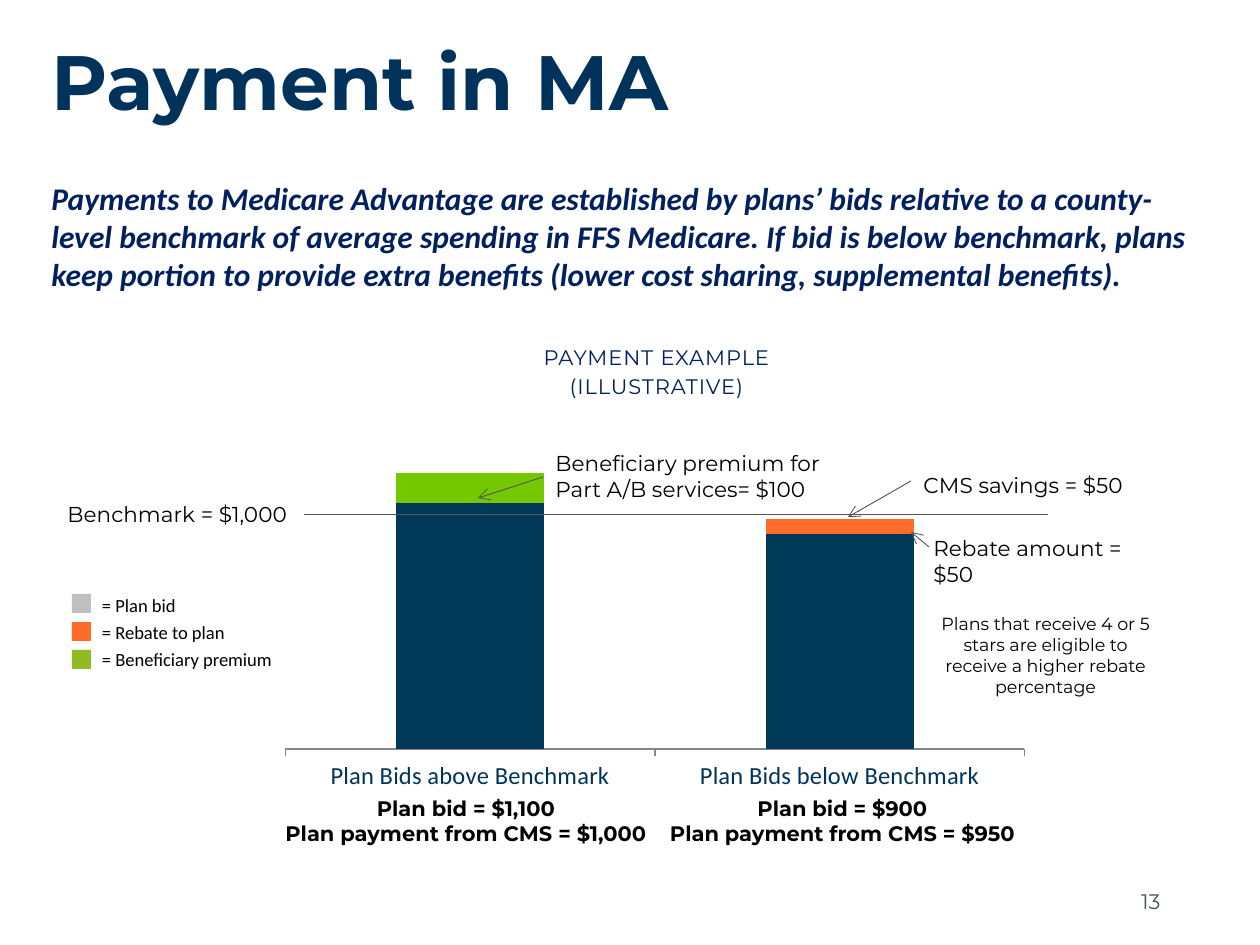
import pptx
import pptx.chart.data
import pptx.dml.color
import pptx.enum.chart
import pptx.enum.shapes
import pptx.enum.text
import pptx.oxml
import pptx.util
from lxml import etree

PX = pptx.util.Inches(1) / 126
ALIGN = pptx.enum.text.PP_ALIGN
ANCHOR = pptx.enum.text.MSO_ANCHOR
NS = 'xmlns:a="http://schemas.openxmlformats.org/drawingml/2006/main"'
rgb = pptx.dml.color.RGBColor.from_string

deck = pptx.Presentation()
deck.slide_width, deck.slide_height = round(1260 * PX), round(945 * PX)
slide = deck.slides.add_slide(deck.slide_layouts[6])
shapes = slide.shapes


def add_text(box, lines, size, color="000000", font="Montserrat", bold=False,
             italic=False, align=ALIGN.LEFT, wrap=False, anchor=ANCHOR.TOP):
    """Box is left, top, width, height in px; each line is a paragraph."""
    label = shapes.add_textbox(*(round(v * PX) for v in box))
    frame = label.text_frame
    frame.word_wrap = wrap
    frame.vertical_anchor = anchor
    frame.text = "\n".join(lines)
    for paragraph in frame.paragraphs:
        paragraph.alignment = align
        for run in paragraph.runs:
            run.font.size = pptx.util.Pt(size)
            run.font.name = font
            run.font.bold = bold
            run.font.italic = italic
            run.font.color.rgb = rgb(color)
    return label


def add_line(start, end, arrow=True):
    line = shapes.add_connector(pptx.enum.shapes.MSO_CONNECTOR.STRAIGHT,
                                *(round(v * PX) for v in start + end))
    line.line.color.rgb = rgb("565656")
    line.line.width = pptx.util.Pt(0.5)
    if arrow:
        line.line._get_or_add_ln().append(
            pptx.oxml.parse_xml(f'<a:tailEnd {NS} type="arrow"/>'))
    line._element.spPr.append(pptx.oxml.parse_xml(f"<a:effectLst {NS}/>"))
    return line


# Heading
title = add_text((39, 16, 793, 117), ["Payment in MA"], 44, "00335B", bold=True,
                 wrap=True, anchor=ANCHOR.BOTTOM)
title.text_frame.paragraphs[0].line_spacing = 0.9
add_text((39, 173, 1182, 127),
         ["Payments to Medicare Advantage are established by plans’ bids relative to a "
          "county-level benchmark of average spending in FFS Medicare. If bid is below "
          "benchmark, plans keep portion to provide extra benefits (lower cost sharing, "
          "supplemental benefits)."],
         18, "002060", "Calibri", bold=True, italic=True, wrap=True)

# Stacked payment columns
payments = pptx.chart.data.CategoryChartData()
payments.categories = ["Plan Bids above Benchmark", "Plan Bids below Benchmark"]
parts = [("Series 1", (100, 90), "003858"),
         ("Series 2", (0, 5), "FF6C29"),
         ("Series 3", (10, 0), "74C800")]
for name, values, _ in parts:
    payments.add_series(name, values)
chart = shapes.add_chart(pptx.enum.chart.XL_CHART_TYPE.COLUMN_STACKED,
                         *(round(v * PX) for v in (270, 466, 770, 333)), payments).chart
chart.has_legend = False
chart.has_title = False
chart.font.size = pptx.util.Pt(18)
chart.font.name = "Calibri"
chart.font.color.rgb = rgb("00335B")
plot = chart.plots[0]
plot.gap_width, plot.overlap = 150, 100
plot.vary_by_categories = False
for series, (_, _, color) in zip(plot.series, parts):
    series.format.fill.solid()
    series.format.fill.fore_color.rgb = rgb(color)
bids = chart.category_axis
bids.major_tick_mark = pptx.enum.chart.XL_TICK_MARK.OUTSIDE
bids.tick_labels.font.size = pptx.util.Pt(14)
bids.format.line.color.rgb = rgb("868686")
amounts = chart.value_axis
amounts.minimum_scale, amounts.maximum_scale, amounts.major_unit = 20, 110, 40
amounts.has_major_gridlines = False
amounts.visible = False

# Fixed inner plot area, as fractions of the chart
plot_area = chart._chartSpace.chart.plotArea
for old in plot_area.xpath("c:layout"):
    plot_area.remove(old)
C = "{http://schemas.openxmlformats.org/drawingml/2006/chart}"
layout = etree.Element(C + "layout")
manual = etree.SubElement(layout, C + "manualLayout")
for tag, value in [("layoutTarget", "inner"), ("xMode", "edge"), ("yMode", "edge"),
                   ("x", "0.02"), ("y", "0.02"), ("w", "0.96"), ("h", "0.83")]:
    etree.SubElement(manual, C + tag).set("val", value)
plot_area.insert(0, layout)

# Benchmark line and annotations
add_line((304, 514), (1048, 514), arrow=False)
add_text((55, 495, 249, 39), ["Benchmark = $1,000"], 12.3)
premium = add_text((543, 444, 294, 66),
                   ["Beneficiary premium for", "Part A/B services= $100"], 12.3)
add_text((911, 466, 232, 39), ["CMS savings = $50"], 12.3)
premium_arrow = add_line((543, 477), (478, 498))
premium_arrow.begin_connect(premium, 1)
add_line((911, 481), (848, 517))
add_line((929, 547), (911, 532))

rebate = add_text((921, 529, 249, 176),
                  ["Rebate amount = $50",
                   "Plans that receive 4 or 5 stars are eligible to receive a higher "
                   "rebate percentage"], 12.3, wrap=True)
stars = rebate.text_frame.paragraphs[1]
stars.alignment = ALIGN.CENTER
stars.space_before = pptx.util.Pt(15)
stars.runs[0].font.size = pptx.util.Pt(10)

for left, width, bid, paid in [(270, 392, "$1,100", "$1,000"), (655, 375, "$900", "$950")]:
    add_text((left, 789, width, 63),
             [f"Plan bid = {bid}", f"Plan payment from CMS = {paid}"],
             12, bold=True, align=ALIGN.CENTER)

# Legend
legend = [("= Plan bid", "BFBFBF"), ("= Rebate to plan", "FF6C29"),
          ("= Beneficiary premium", "90BB23")]
key = add_text((91, 585, 209, 92), [text for text, _ in legend], 10.6, font="Calibri")
key.text_frame.margin_left = round(11 * PX)
key.text_frame.margin_top = round(5 * PX)
for paragraph in key.text_frame.paragraphs:
    paragraph.line_spacing = 1.2
for row, (_, color) in enumerate(legend):
    swatch = shapes.add_shape(pptx.enum.shapes.MSO_SHAPE.RECTANGLE,
                              *(round(v * PX) for v in (72, 594 + 28 * row, 19, 19)))
    swatch.shadow.inherit = False
    swatch.fill.solid()
    swatch.fill.fore_color.rgb = rgb(color)
    swatch.line.fill.background()

# Chart heading and page number
heading = add_text((402, 338, 509, 68), ["PAYMENT EXAMPLE", "(ILLUSTRATIVE)"],
                   12, "002060", align=ALIGN.CENTER, wrap=True)
heading.text_frame.paragraphs[1].space_before = pptx.util.Pt(2.4)
for paragraph in heading.text_frame.paragraphs:
    paragraph.runs[0].font._element.set("spc", "50")
add_text((890, 876, 283, 50), ["13"], 12, "455461", align=ALIGN.RIGHT, wrap=True,
         anchor=ANCHOR.MIDDLE)

deck.save("out.pptx")
